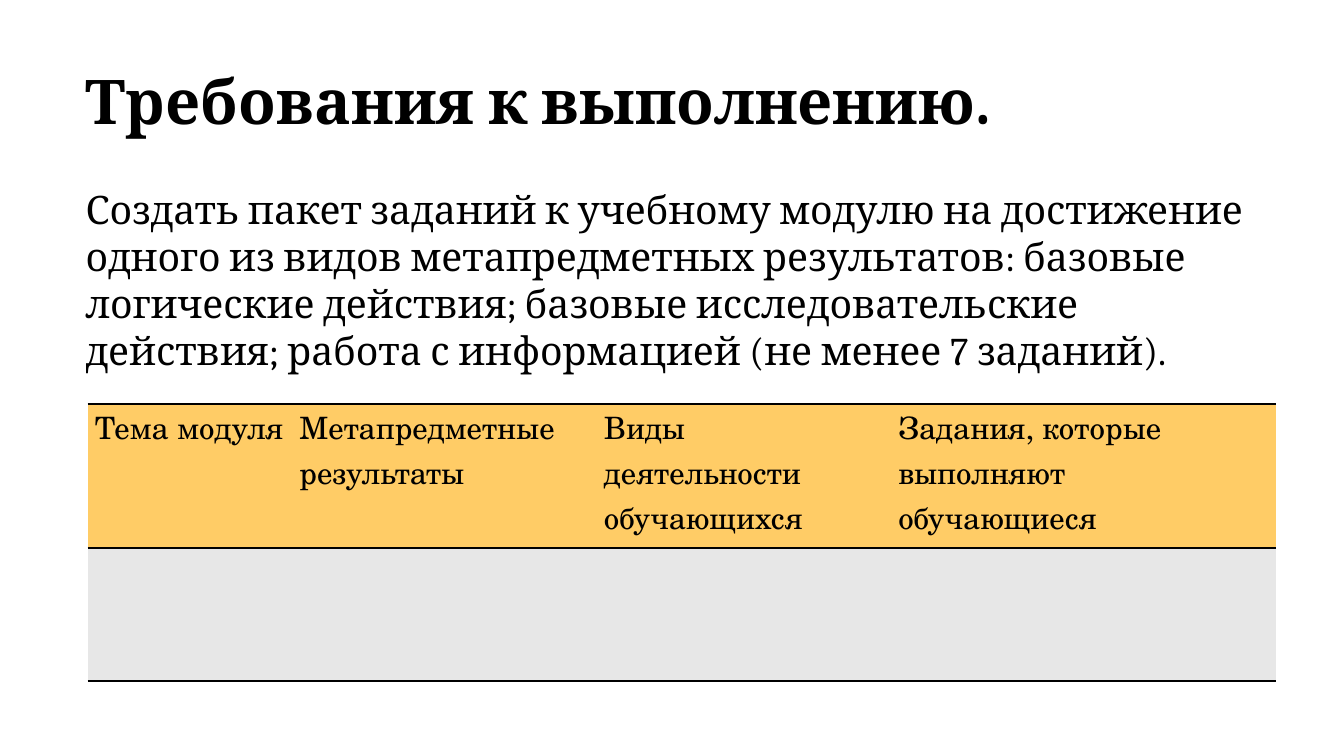
from pptx import Presentation
from pptx.dml.color import RGBColor
from pptx.enum.text import MSO_ANCHOR, PP_ALIGN
from pptx.oxml import parse_xml
from pptx.oxml.ns import nsdecls
from pptx.util import Inches, Pt

BLACK = RGBColor(0x00, 0x00, 0x00)
AMBER = RGBColor(0xFF, 0xCC, 0x66)
GREY = RGBColor(0xE7, 0xE7, 0xE7)
LEFT, JUSTIFY, TOP = PP_ALIGN.LEFT, PP_ALIGN.JUSTIFY, MSO_ANCHOR.TOP

TITLE = "Требования к выполнению."
TASK = (
    "Создать пакет заданий к учебному модулю на достижение одного из видов "
    "метапредметных результатов: базовые логические действия; базовые "
    "исследовательские действия; работа с информацией (не менее 7 заданий)."
)
HEADERS = [
    "Тема модуля",
    "Метапредметные результаты",
    "Виды деятельности обучающихся",
    "Задания, которые выполняют обучающиеся",
]
COLUMN_WIDTHS = [2.03, 3.02, 2.92, 3.82]
ROWS = [(1.43, AMBER, HEADERS), (1.32, GREY, [""] * len(HEADERS))]

TITLE_FONT = {"name": "Cambria", "size": Pt(44), "bold": True}
TASK_FONT = {"name": "Cambria", "size": Pt(28), "bold": False}
TABLE_FONT = {"name": "TeX Gyre Schola", "size": Pt(22), "bold": False}
CELL_FORMAT = {
    "margin_left": Inches(0.07),
    "margin_right": Inches(0.07),
    "margin_top": 0,
    "margin_bottom": 0,
    "vertical_anchor": TOP,
}
RULE_WIDTH = Pt(1.5)


def write(paragraph, text, font_format):
    run = paragraph.add_run()
    run.text = text
    for name, value in font_format.items():
        setattr(run.font, name, value)
    run.font.color.rgb = BLACK


def set_borders(cell):
    """Rule the cell above and below, and leave its sides open."""
    solid = f'<a:solidFill><a:srgbClr val="{BLACK}"/></a:solidFill>'
    properties = cell._tc.get_or_add_tcPr()
    for side in "LRTB":
        line = solid if side in "TB" else "<a:noFill/>"
        properties.append(parse_xml(
            f'<a:ln{side} {nsdecls("a")} w="{RULE_WIDTH}">{line}</a:ln{side}>'))


def add_heading(slide):
    box = slide.shapes.add_textbox(
        Inches(0.75), Inches(0.58), Inches(11.9), Inches(3.2))
    frame = box.text_frame
    frame.word_wrap = True
    title, task = frame.paragraphs[0], frame.add_paragraph()
    write(title, TITLE, TITLE_FONT)
    write(task, TASK, TASK_FONT)
    title.alignment, task.alignment = JUSTIFY, LEFT
    task.space_before = Pt(34)


def add_module_table(slide):
    table = slide.shapes.add_table(
        len(ROWS), len(HEADERS), Inches(0.87), Inches(4.01),
        Inches(sum(COLUMN_WIDTHS)), Inches(sum(row[0] for row in ROWS))).table
    table.first_row = table.horz_banding = False
    for column, width in zip(table.columns, COLUMN_WIDTHS):
        column.width = Inches(width)
    for row, (height, colour, texts) in zip(table.rows, ROWS):
        row.height = Inches(height)
        for cell, text in zip(row.cells, texts):
            for name, value in CELL_FORMAT.items():
                setattr(cell, name, value)
            set_borders(cell)
            cell.fill.solid()
            cell.fill.fore_color.rgb = colour
            if text:
                write(cell.text_frame.paragraphs[0], text, TABLE_FONT)


def main():
    presentation = Presentation()
    presentation.slide_width = Inches(13.33)
    presentation.slide_height = Inches(7.5)
    slide = presentation.slides.add_slide(presentation.slide_layouts[6])
    add_heading(slide)
    add_module_table(slide)
    presentation.save("out.pptx")


if __name__ == "__main__":
    main()
